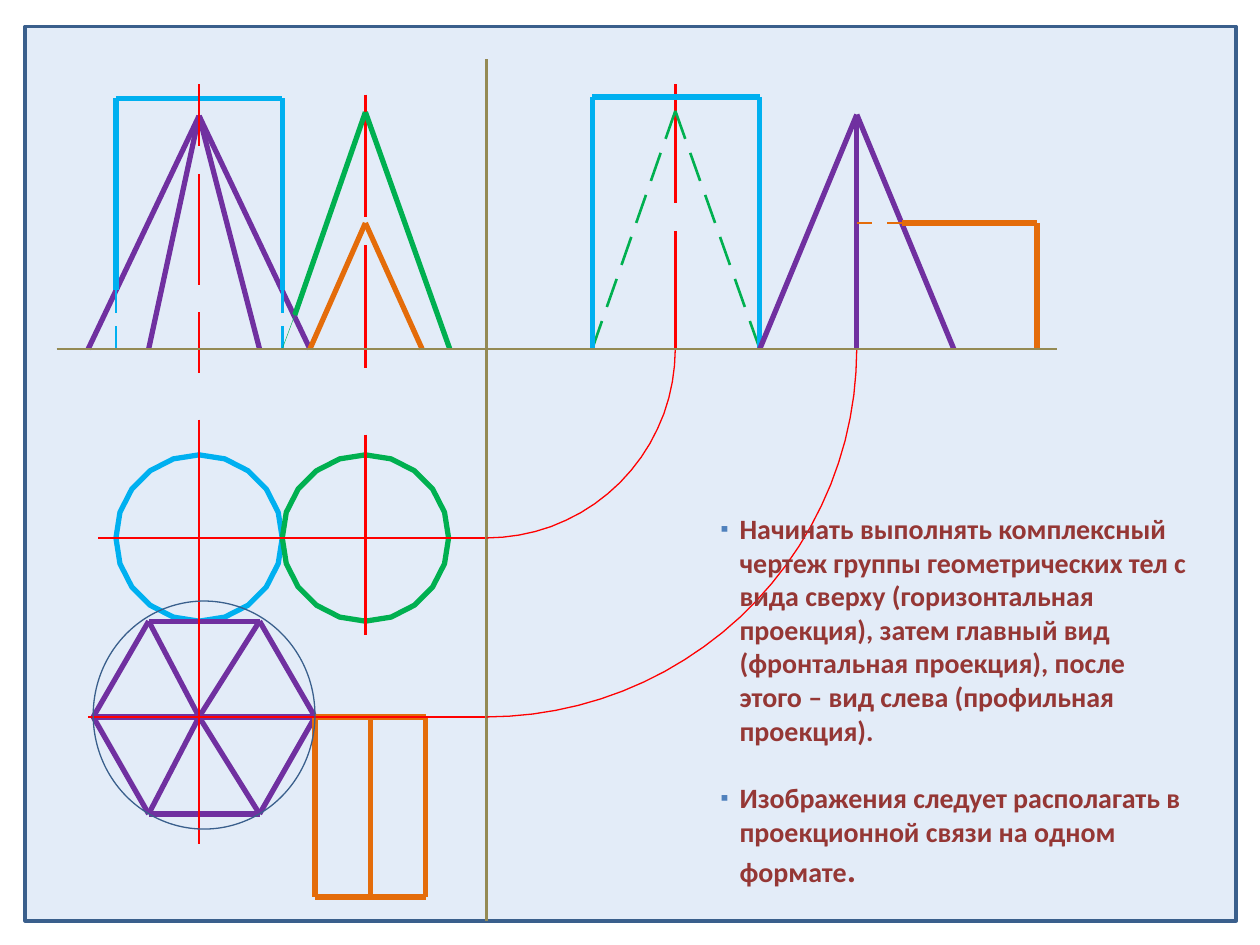
from math import cos, pi, sin

from lxml import etree
from pptx import Presentation
from pptx import util as u
from pptx.dml.color import RGBColor
from pptx.enum import shapes, text
from pptx.oxml.ns import qn

HUE = {"pale": "E3ECF8", "navy": "3A5F8C", "blue": "00B0F0", "green": "00B050",
       "violet": "7030A0", "orange": "E46C0A", "red": "FF0000", "axis": "948A54",
       "text": "953735", "bullet": "4F81BD"}
THICK, MID, THIN = 3, 1.5, 0.75

deck = Presentation()
deck.slide_width, deck.slide_height = u.Inches(10), u.Inches(7.5)
slide = deck.slides.add_slide(deck.slide_layouts[1])
parts = slide.shapes
title = parts.title.element
title.getparent().remove(title)


def line(hue, wide, start, end, count=1, gap=0):
    """Draw count equal dashes; gap is a share of one dash."""
    span = count + (count - 1) * gap
    for i in range(count):
        cuts = (i * (1 + gap) / span, (i * (1 + gap) + 1) / span)
        ends = [u.Inches(a + (b - a) * t) for t in cuts for a, b in zip(start, end)]
        link = parts.add_connector(shapes.MSO_CONNECTOR.STRAIGHT, *ends)
        link.line.color.rgb = RGBColor.from_string(HUE[hue])
        link.line.width = u.Pt(wide)
        etree.SubElement(link.element.spPr, qn("a:effectLst"))


def curve(hue, wide, mid, size, sides, turn, first=0, close=True):
    """Draw an outline of straight sides around mid, with radii in size."""
    spots = [(1000 * (mid[0] + size[0] * cos(first + turn * i / sides)),
              1000 * (mid[1] + size[1] * sin(first + turn * i / sides)))
             for i in range(sides + 1 - close)]
    pen = parts.build_freeform(*spots[0], scale=914.4)
    pen.add_line_segments(spots[1:], close=close)
    form = pen.convert_to_shape()
    form.shadow.inherit = False
    form.fill.background()
    form.line.color.rgb = RGBColor.from_string(HUE[hue])
    form.line.width = u.Pt(wide)


frame = parts.add_shape(shapes.MSO_SHAPE.RECTANGLE, u.Inches(0.2), u.Inches(0.21),
                        u.Inches(9.61), u.Inches(7.1))
frame.shadow.inherit = False
frame.fill.solid()
frame.fill.fore_color.rgb = RGBColor.from_string(HUE["pale"])
frame.line.color.rgb = RGBColor.from_string(HUE["navy"])
frame.line.width = u.Pt(2)

# Columns and rows shared by the three views
cyl, cone, fold = 1.58, 2.9, 3.86
left, right = 0.92, 2.24
side, pyr, edge = 5.36, 6.8, 8.23
base, roof, tip, low = 2.77, 0.78, 0.9, 1.77
back, front, foot = 4.27, 5.69, 7.12

# Top view
for hue, x in (("blue", cyl), ("green", cone)):
    curve(hue, THICK, (x, back), (0.66, 0.66), 20, 2 * pi)
hexa = [(0.74, front), (1.18, 4.93), (2.06, 4.93), (2.5, front), (2.06, 6.46), (1.18, 6.46)]
for i, spot in enumerate(hexa):
    line("violet", THICK, spot, hexa[i - 1])
    line("violet", THICK, (cyl, front), spot)
for x in (2.5, 2.94, 3.38):
    line("orange", THICK, (x, front), (x, foot))
for y in (front, foot):
    line("orange", THICK, (2.5, y), (3.38, y))

# Front view
line("blue", THICK, (left, roof), (right, roof))
for x in (0.7, 1.18, 2.06, 2.46):
    line("violet", THICK, (cyl, tip + 0.02), (x, base))
for x in (left, right):
    line("blue", THICK, (x, roof), (x, 2.3))
    line("blue", MID, (x, 2.3), (x, base), 2, 0.6)
for top, end in ((0.67, 1.16), (1.38, 2.26), (2.48, 2.96), (3.33, 6.7)):
    line("red", MID, (cyl, top), (cyl, end))
line("red", MID, (cone, 0.75), (cone, 2.92), 2, 0.23)
line("green", THICK, (cone, 0.89), (3.57, base))
line("green", THICK, (cone, 0.89), (2.34, 2.5))
line("green", 0.25, (2.34, 2.5), (right, base))
for x in (2.46, 3.35):
    line("orange", THICK, (cone, low), (x, base))

# Side view
line("red", MID, (side, 0.67), (side, base), 2, 0.24)
for x in (4.7, 6.03):
    line("green", MID, (side, 0.88), (x, base), 6, 0.5)
    line("blue", THICK, (x, 0.77), (x, base))
line("blue", THICK, (4.7, 0.77), (6.03, 0.77))
for x in (6.03, pyr, 7.57):
    line("violet", THICK, (pyr, 0.91), (x, base))
line("orange", MID, (pyr, low), (7.16, low), 3 - 1, 1)
line("orange", THICK, (7.16, low), (edge, low))
line("orange", THICK, (edge, low), (edge, base))

# Axes and links between views
line("red", MID, (cone, 3.45), (cone, 5.04))
line("red", MID, (0.78, back), (fold, back))
line("red", MID, (0.7, front), (fold, front))
line("axis", MID, (fold, 0.47), (fold, 7.31))
for x, y, count in ((pyr, front, 25), (side, back, 18)):
    curve("red", THIN, (fold, base), (x - fold, y - base), count, pi / 2, close=False)
line("axis", MID, (0.45, base), (8.39, base))
ring = parts.add_shape(shapes.MSO_SHAPE.OVAL, u.Inches(0.74), u.Inches(4.77),
                       u.Inches(1.76), u.Inches(1.81))
ring.shadow.inherit = False
ring.fill.background()
ring.line.color.rgb = RGBColor.from_string(HUE["navy"])
ring.line.width = u.Pt(THIN)

# Advice, in front of the drawing
body = slide.placeholders[1]
body.element.getparent().append(body.element)
body.left, body.top = u.Inches(5.48), u.Inches(4.06)
body.width, body.height = u.Inches(4.08), u.Inches(2.84)
box = body.text_frame
box.auto_size = text.MSO_AUTO_SIZE.NONE
box.vertical_anchor = text.MSO_ANCHOR.TOP
box.margin_left, box.margin_right = u.Inches(0.2), u.Inches(0.1)
box.margin_top, box.margin_bottom = 0, u.Inches(0.05)
box.text = (
    "Начинать выполнять комплексный чертеж группы геометрических тел с вида сверху "
    "(горизонтальная проекция), затем главный вид (фронтальная проекция), после этого – "
    "вид слева (профильная проекция).\n"
    "Изображения следует располагать в проекционной связи на одном формате")
for para, space in zip(box.paragraphs, (0, 19.5)):
    para.space_before = u.Pt(space)
    para.font.name, para.font.size, para.font.bold = "Calibri", u.Pt(16), True
    para.font.color.rgb = RGBColor.from_string(HUE["text"])
    props = para._p.get_or_add_pPr()
    props.set("marL", str(u.Inches(0.19)))
    props.set("indent", str(u.Inches(-0.15)))
    marks = [etree.Element(qn("a:buClr")), etree.Element(qn("a:buSzPct"), val="80000"),
             etree.Element(qn("a:buFont"), typeface="Calibri"),
             etree.Element(qn("a:buChar"), char="▪")]
    etree.SubElement(marks[0], qn("a:srgbClr"), val=HUE["bullet"])
    for mark in marks:
        props.find(qn("a:defRPr")).addprevious(mark)
dot = box.paragraphs[1].add_run()
dot.text = "."
dot.font.size = u.Pt(20)

deck.save("out.pptx")
